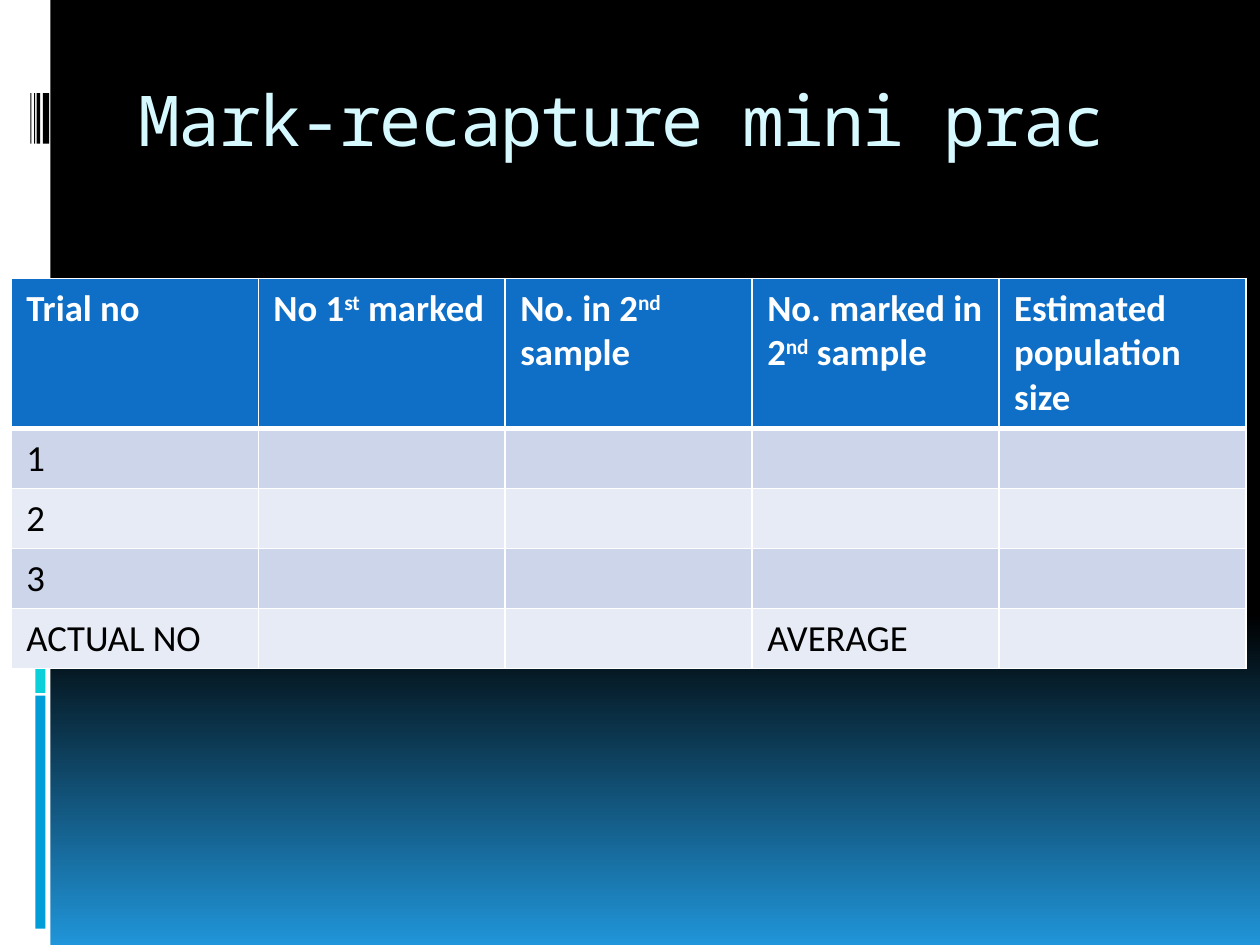
from lxml import etree
from pptx import Presentation
from pptx.dml.color import RGBColor
from pptx.enum.shapes import MSO_SHAPE
from pptx.enum.text import MSO_ANCHOR, PP_ALIGN
from pptx.oxml.ns import qn
from pptx.util import Inches, Pt

RECTANGLE = MSO_SHAPE.RECTANGLE
TOP = MSO_ANCHOR.TOP
LEFT = PP_ALIGN.LEFT

TITLE_ONLY = 5
WHITE, BLACK = "FFFFFF", "000000"
HEADER_BLUE = "0F6FC6"
BANDS = ("CCD5EA", "E7EBF5")

# Each heading is a list of (text, is_superscript) pieces.
HEADINGS = [
    [("Trial no", False)],
    [("No 1", False), ("st", True), (" marked", False)],
    [("No. in 2", False), ("nd", True), (" sample", False)],
    [("No. marked in 2", False), ("nd", True), (" sample", False)],
    [("Estimated population size", False)],
]
TRIALS = [
    ["1", "", "", "", ""],
    ["2", "", "", "", ""],
    ["3", "", "", "", ""],
    ["ACTUAL NO", "", "", "AVERAGE", ""],
]

SIDE_BLOCKS = [  # left, top, width, height, colour
    (0, 0, 0.4, 7.5, WHITE),
    (0.28, 5.52, 0.08, 1.85, "009DD9"),
    (0.28, 5.25, 0.08, 0.25, "0BD0D9"),
    (0.28, 5.07, 0.08, 0.15, "04617B"),
    (0.28, 4.97, 0.08, 0.08, "009DD9"),
]
BARCODE = [(0.34, 0.05), (0.29, 0.03), (0.27, 0.01), (0.24, 0.01)]  # left, width


def rgb(colour):
    return RGBColor.from_string(colour)


def add_text(paragraph, text, *, size, font, colour, bold=False,
             superscript=False, spacing=0):
    """Append a formatted run; spacing is in points between letters."""
    run = paragraph.add_run()
    run.text = text
    run.font.size = Pt(size)
    run.font.name = font
    run.font.bold = bold
    run.font.color.rgb = rgb(colour)
    properties = run._r.get_or_add_rPr()
    if superscript:
        properties.set("baseline", "30000")
    if spacing:
        properties.set("spc", str(spacing * 100))


def paint_background(slide):
    fill = slide.background.fill
    fill.gradient()
    fill.gradient_angle = 270  # downwards: the angle counts anticlockwise
    for stop, position, colour in zip(fill.gradient_stops, (0.65, 1), (BLACK, "2095D9")):
        stop.position = position
        stop.color.rgb = rgb(colour)


def add_block(slide, left, top, width, height, colour):
    block = slide.shapes.add_shape(
        RECTANGLE, Inches(left), Inches(top), Inches(width), Inches(height))
    block.shadow.inherit = False
    block.fill.solid()
    block.fill.fore_color.rgb = rgb(colour)
    block.line.fill.background()


def add_side_strip(slide):
    for block in SIDE_BLOCKS:
        add_block(slide, *block)
    for left, width in BARCODE:
        add_block(slide, left, 0.74, width, 0.4, BLACK)


def add_title(slide, text):
    title = slide.shapes.title
    title.left, title.top = Inches(1), Inches(0.56)
    title.width, title.height = Inches(8.5), Inches(1)
    title.text_frame.vertical_anchor = TOP
    paragraph = title.text_frame.paragraphs[0]
    paragraph.alignment = LEFT
    add_text(paragraph, text, size=40, font="Noto Sans Mono",
             colour="D5F9FF", spacing=-1)


def set_borders(cell, **widths):
    """Draw white borders; widths are points by side, in the order L, R, T, B."""
    properties = cell._tc.get_or_add_tcPr()
    for side, width in widths.items():
        line = etree.SubElement(properties, qn(f"a:ln{side}"), w=str(Pt(width)))
        fill = etree.SubElement(line, qn("a:solidFill"))
        etree.SubElement(fill, qn("a:srgbClr"), val=WHITE)


def format_cell(cell, colour, top_border, bottom_border):
    cell.margin_left = cell.margin_right = Inches(0.12)
    cell.margin_top = cell.margin_bottom = Inches(0.06)
    set_borders(cell, L=1, R=1, T=top_border, B=bottom_border)
    cell.fill.solid()
    cell.fill.fore_color.rgb = rgb(colour)


def add_results_table(slide):
    table = slide.shapes.add_table(
        len(TRIALS) + 1, len(HEADINGS),
        Inches(0.09), Inches(2.21), Inches(9.8), Inches(3.06)).table
    for column in table.columns:
        column.width = Inches(1.96)
    for index, row in enumerate(table.rows):
        row.height = Inches(0.47 if index else 1.18)

    for column, pieces in enumerate(HEADINGS):
        cell = table.cell(0, column)
        format_cell(cell, HEADER_BLUE, top_border=1, bottom_border=3)
        for text, superscript in pieces:
            add_text(cell.text_frame.paragraphs[0], text, size=21, font="Calibri",
                     colour=WHITE, bold=True, superscript=superscript)

    for row, values in enumerate(TRIALS, start=1):
        for column, value in enumerate(values):
            cell = table.cell(row, column)
            format_cell(cell, BANDS[(row - 1) % 2],
                        top_border=3 if row == 1 else 1, bottom_border=1)
            if value:
                add_text(cell.text_frame.paragraphs[0], value, size=21,
                         font="Calibri", colour=BLACK)


def main():
    presentation = Presentation()
    presentation.slide_width, presentation.slide_height = Inches(10), Inches(7.5)
    slide = presentation.slides.add_slide(presentation.slide_layouts[TITLE_ONLY])
    paint_background(slide)
    add_side_strip(slide)
    add_title(slide, "Mark-recapture mini prac")
    add_results_table(slide)
    presentation.save("out.pptx")


if __name__ == "__main__":
    main()
